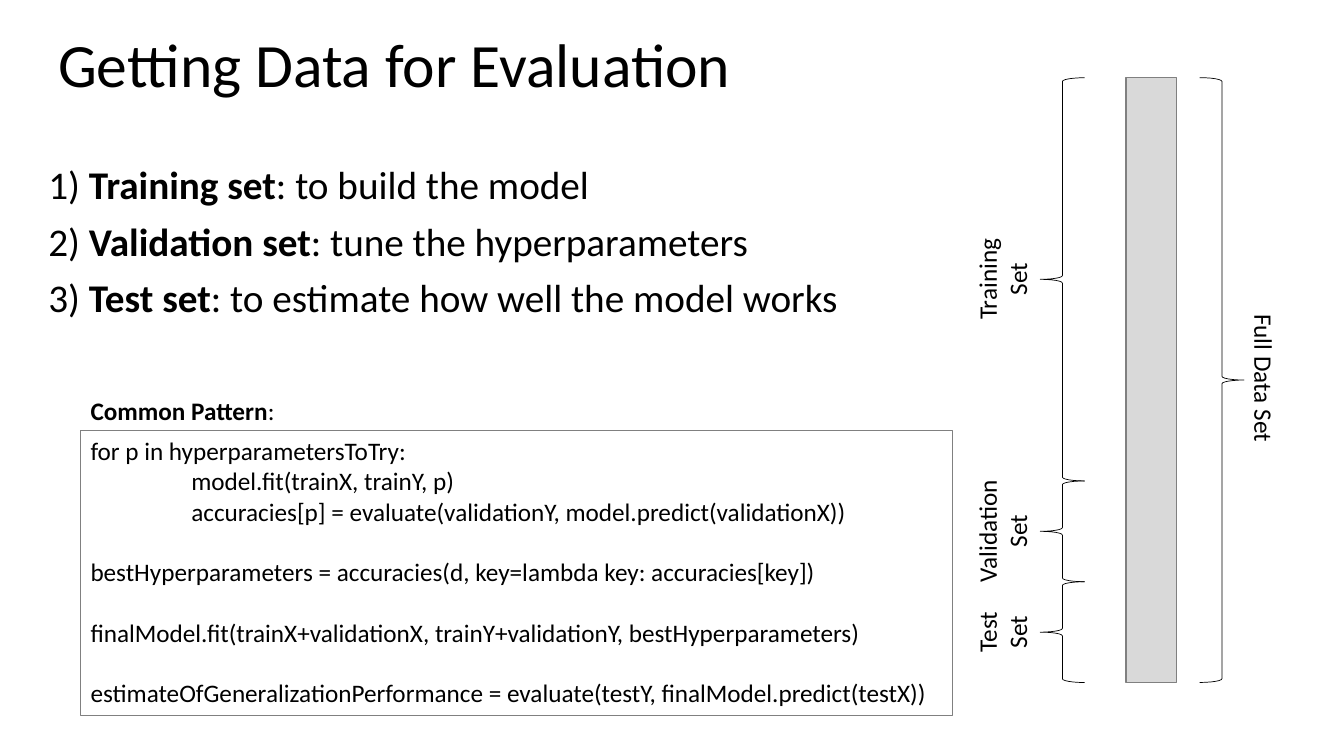
import dataclasses

import pptx
import pptx.dml.color
import pptx.enum.shapes
import pptx.enum.text
import pptx.util

Pt = pptx.util.Pt
SHAPES = pptx.enum.shapes.MSO_SHAPE
ANCHOR = pptx.enum.text.MSO_ANCHOR
AUTO_SIZE = pptx.enum.text.MSO_AUTO_SIZE
ALIGN = pptx.enum.text.PP_ALIGN


@dataclasses.dataclass(frozen=True)
class Theme:
    font: str = "Calibri"
    text: str = "000000"
    bar: str = "D9D9D9"
    outline: str = "808080"
    title_size: int = 44
    list_size: int = 28
    small_size: int = 18


THEME = Theme()

# Data bar geometry: one unit is a tenth... of no fixed total, 72 points high
UNIT = 72
BAR_TOP = 55.5
BRACE_WIDTH = 31.7
SPLIT_BRACE_LEFT = 743
SPLIT_LABEL_CENTER = 716

# Name, units of height, label width
SPLITS = [("Training", 4, 72.7), ("Validation", 1, 88.6), ("Test", 1, 44)]

SETS = [
    ("Training set", ": to build the model"),
    ("Validation set", ": tune the hyperparameters"),
    ("Test set", ": to estimate how well the model works"),
]

# Text, left indent, space before
CODE_GAP = 21.6
CODE = [
    ("for p in hyperparametersToTry:", 0, 0),
    ("model.fit(trainX, trainY, p)", 72, 0),
    ("accuracies[p] = evaluate(validationY, model.predict(validationX))", 72, 0),
    ("bestHyperparameters = accuracies(d, key=lambda key: accuracies[key])", 0, CODE_GAP),
    ("finalModel.fit(trainX+validationX, trainY+validationY, bestHyperparameters)", 0, CODE_GAP),
    ("estimateOfGeneralizationPerformance = evaluate(testY, finalModel.predict(testX))", 0, CODE_GAP),
]


def color(value):
    return pptx.dml.color.RGBColor.from_string(value)


def apply_format(target, values):
    for name, value in values.items():
        setattr(target, name, value)


def write_text(shape, paragraphs, size, paragraph_format=None):
    """Each paragraph is a list of (text, bold) runs."""
    frame = shape.text_frame
    for index, runs in enumerate(paragraphs):
        paragraph = frame.paragraphs[0] if index == 0 else frame.add_paragraph()
        apply_format(paragraph, {"alignment": ALIGN.LEFT, **(paragraph_format or {})})
        for text, bold in runs:
            run = paragraph.add_run()
            run.text = text
            apply_format(run.font, {"name": THEME.font, "size": Pt(size), "bold": bold})
            run.font.color.rgb = color(THEME.text)
    return frame


def add_text(slide, box, paragraphs, size, frame_format=None, paragraph_format=None):
    shape = slide.shapes.add_textbox(*map(Pt, box))
    frame = write_text(shape, paragraphs, size, paragraph_format)
    apply_format(frame, {"word_wrap": True, **(frame_format or {})})
    return shape


def add_outline(slide, kind, box, line_color, line_width, fill=None, rotation=0):
    shape = slide.shapes.add_shape(kind, *map(Pt, box))
    shape.shadow.inherit = False
    shape.rotation = rotation
    if fill:
        shape.fill.solid()
        shape.fill.fore_color.rgb = color(fill)
    else:
        shape.fill.background()
    shape.line.color.rgb = color(line_color)
    shape.line.width = Pt(line_width)
    return shape


def add_brace(slide, left, top, height, rotation=0):
    add_outline(slide, SHAPES.RIGHT_BRACE, (left, top, BRACE_WIDTH, height),
                THEME.text, 0.5, rotation=rotation)


def add_turned_label(slide, center_x, center_y, width, height, lines, rotation):
    label = add_text(
        slide, (center_x - width / 2, center_y - height / 2, width, height),
        [[(line, False)] for line in lines], THEME.small_size,
        {"word_wrap": False, "auto_size": AUTO_SIZE.SHAPE_TO_FIT_TEXT},
        {"alignment": ALIGN.CENTER})
    label.rotation = rotation


def add_code_box(slide, box):
    shape = add_outline(slide, SHAPES.RECTANGLE, box, THEME.outline, 0.75)
    frame = write_text(shape, [[(text, False)] for text, _, _ in CODE], THEME.small_size)
    apply_format(frame, {"word_wrap": True, "vertical_anchor": ANCHOR.TOP})
    for paragraph, (_, indent, gap) in zip(frame.paragraphs, CODE):
        paragraph.space_before = Pt(gap)
        paragraph._p.get_or_add_pPr().set("marL", str(Pt(indent)))


def add_data_bar(slide):
    full_height = UNIT * sum(units for _, units, _ in SPLITS)
    add_outline(slide, SHAPES.RECTANGLE, (804.25, BAR_TOP, 36, full_height),
                THEME.outline, 1, THEME.bar)

    # Whole set on the right
    add_brace(slide, 857, BAR_TOP, full_height)
    add_turned_label(slide, 903, 270, 106.6, 29, ["Full Data Set"], 90)

    # Splits on the left, stacked from the top
    top = BAR_TOP
    for name, units, label_width in SPLITS:
        height = units * UNIT
        add_brace(slide, SPLIT_BRACE_LEFT, top, height, 180)
        add_turned_label(slide, SPLIT_LABEL_CENTER, top + height / 2, label_width, 51,
                         [name, "Set"], 270)
        top += height


def main():
    presentation = pptx.Presentation()
    presentation.slide_width = Pt(960)
    presentation.slide_height = Pt(540)
    slide = presentation.slides.add_slide(presentation.slide_layouts[6])

    # Title
    add_text(slide, (34.5, 20, 706, 57), [[("Getting Data for Evaluation", False)]],
             THEME.title_size, {"vertical_anchor": ANCHOR.MIDDLE}, {"line_spacing": 0.9})

    # Numbered sets
    add_text(slide, (27.5, 115, 654, 132.5),
             [[(f"{number}) ", False), (name, True), (purpose, False)]
              for number, (name, purpose) in enumerate(SETS, 1)],
             THEME.list_size, None, {"line_spacing": 0.9, "space_before": Pt(10)})

    # Code pattern
    add_text(slide, (57.6, 278.6, 147.6, 29), [[("Common Pattern", True), (":", False)]],
             THEME.small_size, {"word_wrap": False})
    add_code_box(slide, (57.6, 307.5, 623, 203.8))

    # Data split diagram
    add_data_bar(slide)

    presentation.save("out.pptx")


if __name__ == "__main__":
    main()
